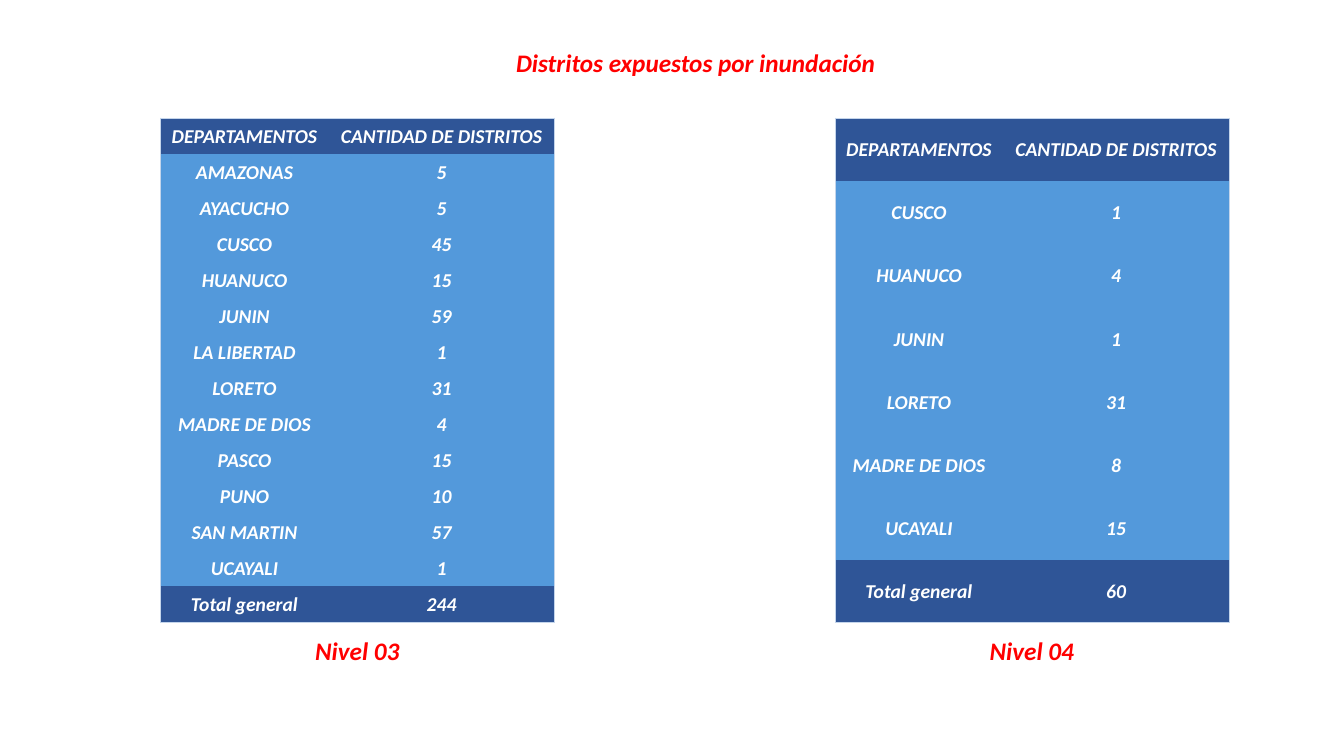
from lxml.etree import SubElement
from pptx import Presentation
from pptx.dml.color import RGBColor
from pptx.enum.text import MSO_ANCHOR as Anchor, MSO_AUTO_SIZE as AutoSize, PP_ALIGN as Align
from pptx.oxml.ns import qn
from pptx.util import Inches, Pt

COLORS = {
    "heading": "FF0000",
    "band": "2F5597",
    "body": "5399DB",
    "text": "FFFFFF",
    "border": "C4D5EB",
}
FONT = "Calibri"
PLAIN_STYLE = "{2D5ABB26-0587-4C30-8999-92F81FD0307C}"
COLUMN_WIDTHS = (1.67, 2.24)
TABLE_TOP, TABLE_HEIGHT = 1.17, 5.01
CAPTION_WIDTH, CAPTION_HEIGHT, CAPTION_GAP = 1.2, 0.4, 0.07
HEADER = ("DEPARTAMENTOS", "CANTIDAD DE DISTRITOS")

LEVELS = [
    ("Nivel 03", 1.59, [
        ("AMAZONAS", 5), ("AYACUCHO", 5), ("CUSCO", 45), ("HUANUCO", 15),
        ("JUNIN", 59), ("LA LIBERTAD", 1), ("LORETO", 31),
        ("MADRE DE DIOS", 4), ("PASCO", 15), ("PUNO", 10),
        ("SAN MARTIN", 57), ("UCAYALI", 1), ("Total general", 244),
    ]),
    ("Nivel 04", 8.28, [
        ("CUSCO", 1), ("HUANUCO", 4), ("JUNIN", 1), ("LORETO", 31),
        ("MADRE DE DIOS", 8), ("UCAYALI", 15), ("Total general", 60),
    ]),
]


def write_text(frame, text, size, color):
    """Write one centred bold italic run into a text frame."""
    para = frame.paragraphs[0]
    para.alignment = Align.CENTER
    span = para.add_run()
    span.text = text
    font = span.font
    font.name, font.size = FONT, Pt(size)
    font.bold = font.italic = True
    font.color.rgb = RGBColor.from_string(COLORS[color])


def format_heading(box, text, wrap):
    """Fill a title or caption box with red heading text."""
    frame = box.text_frame
    frame.word_wrap = wrap
    frame.auto_size = AutoSize.SHAPE_TO_FIT_TEXT
    frame.vertical_anchor = Anchor.TOP
    write_text(frame, text, 18, "heading")


def add_title(page, left, top, width, height):
    """Move the title placeholder into its box and fill it."""
    title = page.shapes.title
    title.left, title.top = Inches(left), Inches(top)
    title.width, title.height = Inches(width), Inches(height)
    format_heading(title, "Distritos expuestos por inundación", False)


def add_border(cell, side):
    """Draw a thin line along one side of a cell."""
    properties = cell._tc.get_or_add_tcPr()
    line = SubElement(properties, qn(f"a:{side}"), w=str(Pt(0.5)))
    fill = SubElement(line, qn("a:solidFill"))
    SubElement(fill, qn("a:srgbClr"), val=COLORS["border"])


def format_cell(cell, text, color, sides):
    """Set the margins, outline, fill and text of a cell."""
    cell.margin_left = cell.margin_top = cell.margin_right = Inches(0.01)
    cell.margin_bottom = 0
    cell.vertical_anchor = Anchor.MIDDLE
    for side in sides:
        add_border(cell, side)
    cell.fill.solid()
    cell.fill.fore_color.rgb = RGBColor.from_string(COLORS[color])
    write_text(cell.text_frame, text, 14, "text")


def add_district_table(page, rows, left, top, width, height):
    """Place a table of district counts with dark first and last rows."""
    rows = [HEADER, *rows]
    last = len(rows) - 1
    frame = page.shapes.add_table(
        len(rows), len(HEADER), Inches(left), Inches(top), Inches(width), Inches(height))
    table = frame.table
    table._tbl.tblPr.find(qn("a:tableStyleId")).text = PLAIN_STYLE
    table.horz_banding = False
    for column, column_width in zip(table.columns, COLUMN_WIDTHS):
        column.width = Inches(column_width)
    for index, values in enumerate(rows):
        table.rows[index].height = Inches(height / len(rows))
        color = "band" if index in (0, last) else "body"
        for position, value in enumerate(values):
            sides = ["lnL" if position == 0 else "lnR"]
            if index == 0:
                sides.append("lnT")
            if index == last:
                sides.append("lnB")
            format_cell(table.cell(index, position), str(value), color, sides)


def add_level(page, caption, rows, left, top, height):
    """Place a table with its level caption centred below."""
    width = sum(COLUMN_WIDTHS)
    add_district_table(page, rows, left, top, width, height)
    box = page.shapes.add_textbox(
        Inches(left + (width - CAPTION_WIDTH) / 2), Inches(top + height + CAPTION_GAP),
        Inches(CAPTION_WIDTH), Inches(CAPTION_HEIGHT))
    format_heading(box, caption, True)


def main():
    """Build the deck and save it."""
    deck = Presentation()
    deck.slide_width, deck.slide_height = Inches(13.33), Inches(7.5)
    page = deck.slides.add_slide(deck.slide_layouts.get_by_name("Title Only"))
    add_title(page, 5, 0.42, 3.8, 0.4)
    for caption, left, rows in LEVELS:
        add_level(page, caption, rows, left, TABLE_TOP, TABLE_HEIGHT)
    deck.save("out.pptx")


if __name__ == "__main__":
    main()
